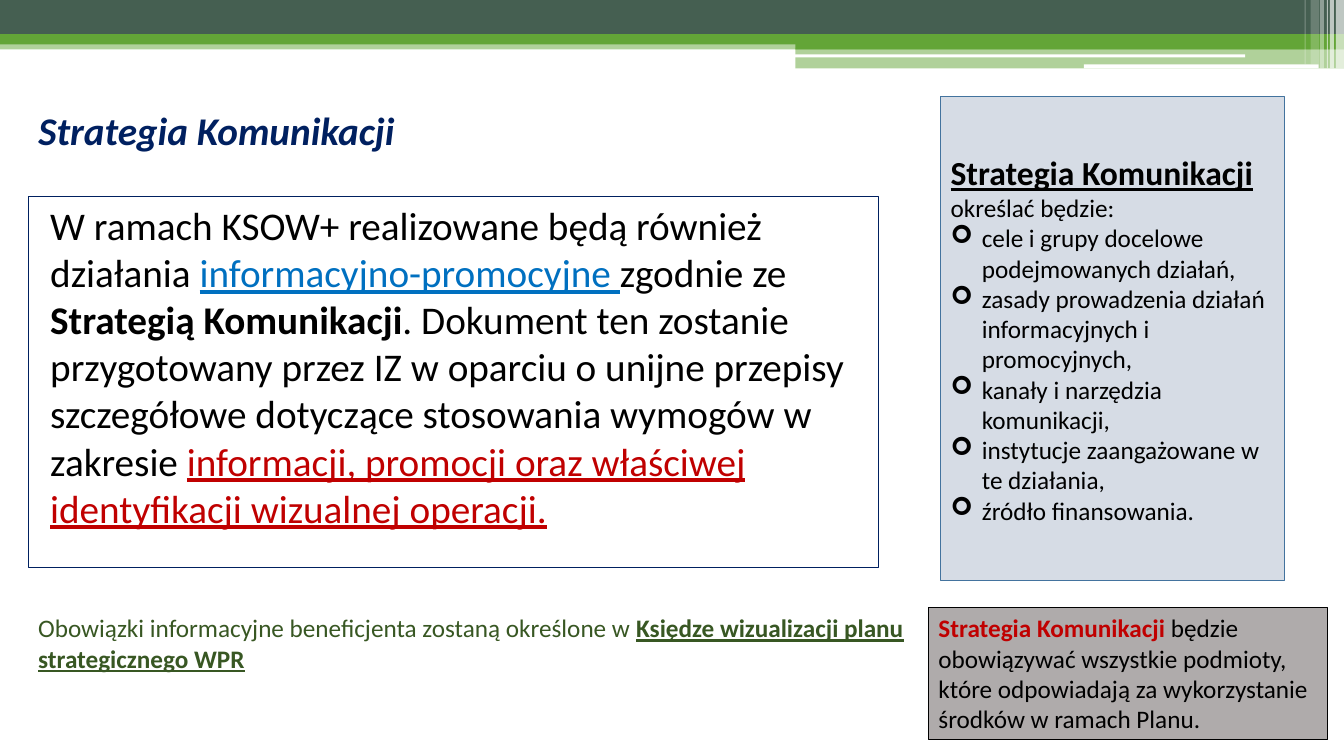
from lxml import etree
from pptx import Presentation, util as u
from pptx.dml.color import RGBColor
from pptx.enum import shapes, text
from pptx.oxml import ns

COLORS = dict(pine="455F51", green="63A537", white="FFFFFF", navy="002060", black="000000",
              blue="0070C0", red="C00000", pale="D6DCE5", steel="43739E", gray="AFABAB",
              moss="385723")

BANDS = [
    (0, 0.4, 13.33, 0.09, "green", 50),
    (0, 0, 13.33, 0.34, "pine", 100),
    (0, 0.34, 13.33, 0.1, "green", 100),
    (7.89, 0.39, 5.44, 0.1, "green", 100),
    (7.89, 0.48, 5.44, 0.2, "green", 50),
    (7.88, 0.54, 4.47, 0.03, "white", 100),
    (10.75, 0.64, 2.33, 0.04, "white", 100),
    (13.25, 0, 0.08, 0.68, "white", 65),
    (13.19, 0, 0.04, 0.68, "white", 65),
    (13.16, 0, 0.01, 0.68, "white", 60),
    (13.09, 0, 0.04, 0.68, "white", 40),
    (13, 0, 0.08, 0.64, "white", 20),
    (12.94, 0, 0.01, 0.64, "white", 30),
]

PLAIN = dict(size=18, color="black")
LARGE = dict(size=28, color="black")
BOLD = dict(bold=True)
LINKED = dict(underline=True)

TITLE = [[("Strategia Komunikacji", dict(size=28, color="navy", bold=True, italic=True))]]
MAIN = [[
    ("W ramach KSOW+ realizowane będą również działania ", LARGE),
    ("informacyjno-promocyjne ", LARGE | LINKED | dict(color="blue")),
    ("zgodnie ze ", LARGE),
    ("Strategią Komunikacji", LARGE | BOLD),
    (". Dokument ten zostanie przygotowany przez IZ w oparciu o unijne przepisy szczegółowe "
     "dotyczące stosowania wymogów w zakresie ", LARGE),
    ("informacji, promocji oraz właściwej identyfikacji wizualnej operacji.",
     LARGE | LINKED | dict(color="red")),
]]
SCOPE_INTRO = [
    ("Strategia Komunikacji ", PLAIN | BOLD | LINKED | dict(size=24)),
    ("określać będzie:", PLAIN),
]
SCOPE_ITEMS = [
    "cele i grupy docelowe podejmowanych działań,",
    "zasady prowadzenia działań informacyjnych i promocyjnych,",
    "kanały i narzędzia komunikacji,",
    "instytucje zaangażowane w te działania,",
    "źródło finansowania.",
]
SCOPE = [SCOPE_INTRO] + [[(item, PLAIN)] for item in SCOPE_ITEMS]
DUTY = [[
    ("Strategia Komunikacji ", PLAIN | BOLD | dict(color="red")),
    ("będzie obowiązywać wszystkie podmioty, które odpowiadają za wykorzystanie środków "
     "w ramach Planu.", PLAIN),
]]
NOTE = [[
    ("Obowiązki informacyjne beneficjenta zostaną określone w ", PLAIN | dict(color="moss")),
    ("Księdze wizualizacji planu strategicznego WPR",
     PLAIN | BOLD | LINKED | dict(color="moss")),
]]

TOP, MIDDLE = text.MSO_ANCHOR.TOP, text.MSO_ANCHOR.MIDDLE
PANELS = [
    ((0.28, 1.95, 8.43, 3.68), "white", "navy", 0.75, TOP, MAIN),
    ((9.33, 0.96, 3.41, 4.8), "pale", "steel", 1, MIDDLE, SCOPE),
    ((9.21, 6.03, 3.96, 1.31), "gray", "black", 0.75, TOP, DUTY),
]
TITLE_BOX = (0.28, 0.72, 8.43, 1.14)
NOTE_BOX = (0.28, 6.03, 8.93, 0.71)


def rgb(name):
    return RGBColor.from_string(COLORS[name])


def inches(box):
    return [u.Inches(v) for v in box]


def add_rect(s, box, fill):
    sp = s.shapes.add_shape(shapes.MSO_SHAPE.RECTANGLE, *inches(box))
    sp.shadow.inherit = False
    sp.fill.solid()
    sp.fill.fore_color.rgb = rgb(fill)
    sp.line.fill.background()
    return sp


def write(sp, paragraphs, anchor):
    tf = sp.text_frame
    for name, value in dict(word_wrap=True, vertical_anchor=anchor,
                            auto_size=text.MSO_AUTO_SIZE.NONE).items():
        setattr(tf, name, value)
    for i, runs in enumerate(paragraphs):
        p = tf.paragraphs[0] if i == 0 else tf.add_paragraph()
        p.alignment = text.PP_ALIGN.LEFT
        p.line_spacing = 1.0
        p.space_before = u.Pt(0)
        for words, style in runs:
            r = p.add_run()
            r.text = words
            r.font.name = "Calibri"
            for name, value in style.items():
                if name == "color":
                    r.font.color.rgb = rgb(value)
                else:
                    setattr(r.font, name, u.Pt(value) if name == "size" else value)
    return tf


def indent(p, left, first=0):
    pPr = p._p.get_or_add_pPr()
    pPr.set("marL", str(u.Inches(left)))
    pPr.set("indent", str(u.Inches(first)))
    return pPr


def add_bullet(p):
    pPr = indent(p, 0.31, -0.31)
    etree.SubElement(pPr, ns.qn("a:buFont"), typeface="Wingdings")
    etree.SubElement(pPr, ns.qn("a:buChar"), char="➢")


def main():
    prs = Presentation()
    prs.slide_width, prs.slide_height = u.Inches(13.33), u.Inches(7.5)
    s = prs.slides.add_slide(prs.slide_layouts[5])

    for *box, fill, opacity in BANDS:
        sp = add_rect(s, box, fill)
        if opacity < 100:
            clr = sp._element.spPr.find(".//" + ns.qn("a:srgbClr"))
            etree.SubElement(clr, ns.qn("a:alpha"), val=str(opacity * 1000))

    title = s.shapes.title
    title.left, title.top, title.width, title.height = inches(TITLE_BOX)
    write(title, TITLE, MIDDLE)

    frames = []
    for box, fill, line, weight, anchor, paragraphs in PANELS:
        sp = add_rect(s, box, fill)
        sp.line.color.rgb = rgb(line)
        sp.line.width = u.Pt(weight)
        frames.append(write(sp, paragraphs, anchor))

    main_text, scope_text, _ = frames
    main_text.paragraphs[0].space_before = u.Pt(3)
    indent(main_text.paragraphs[0], 0.12)
    for p in scope_text.paragraphs[1:]:
        add_bullet(p)

    write(s.shapes.add_textbox(*inches(NOTE_BOX)), NOTE, TOP)
    prs.save("out.pptx")


if __name__ == "__main__":
    main()
